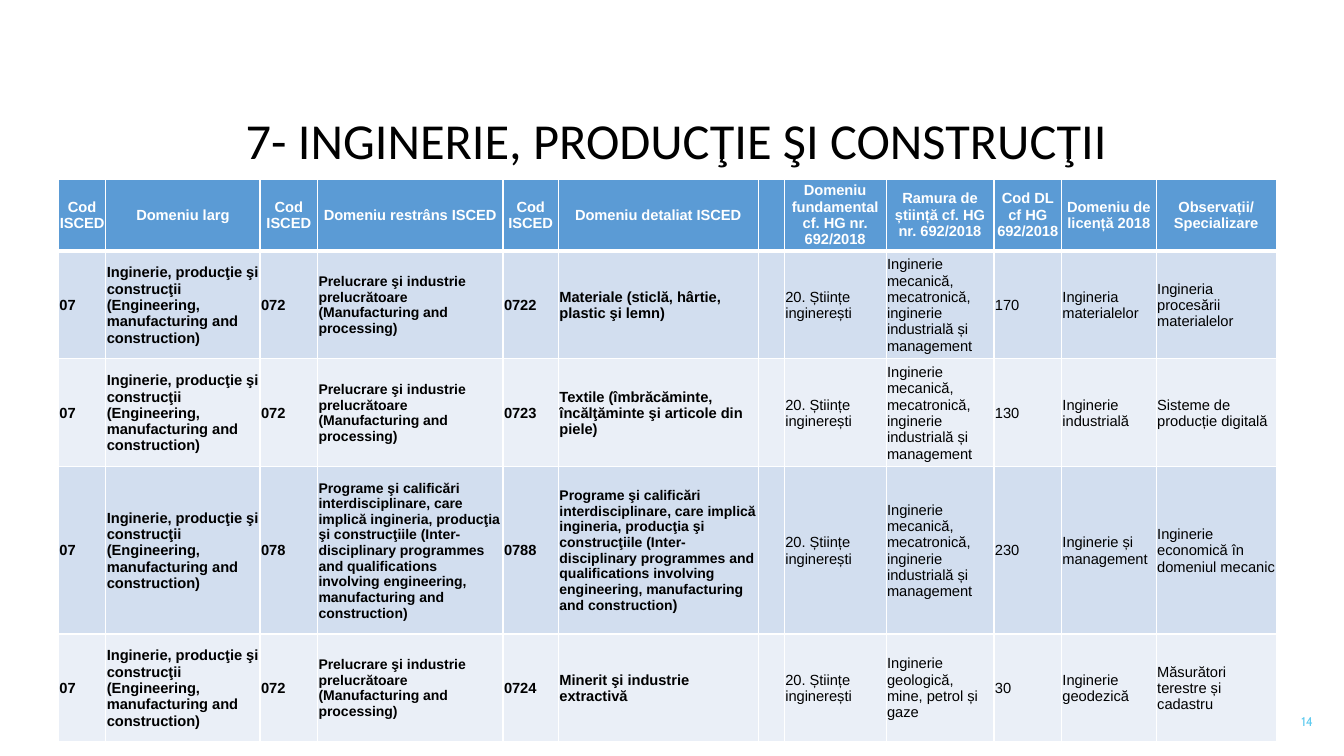
from lxml.etree import SubElement
from pptx import Presentation
from pptx.dml.color import RGBColor
from pptx.enum.text import MSO_ANCHOR, MSO_AUTO_SIZE, PP_ALIGN
from pptx.oxml import parse_xml
from pptx.oxml.ns import nsdecls, qn
from pptx.util import Emu, Pt

PX = 9144  # EMU per px, 100 px to the inch

BLACK = RGBColor(0x00, 0x00, 0x00)
WHITE = RGBColor(0xFF, 0xFF, 0xFF)
HEADER_BLUE = RGBColor(0x5B, 0x9B, 0xD5)
BAND_COLORS = (RGBColor(0xD2, 0xDE, 0xEF), RGBColor(0xEA, 0xEF, 0xF7))
NUMBER_BLUE = RGBColor(0x5F, 0xCB, 0xEF)

# Table contents
COLUMN_WIDTHS = (47, 153, 57, 184, 55, 198, 26, 101, 107, 67, 94, 119)
ROW_HEIGHTS = (71, 107, 107, 166, 107)
NARROW_FIELD_COLUMN = 3
BOLD_COLUMNS = range(6)

HEADERS = (
    "Cod ISCED", "Domeniu larg", "Cod ISCED", "Domeniu restrâns ISCED",
    "Cod ISCED", "Domeniu detaliat ISCED", "",
    "Domeniu fundamental cf. HG nr. 692/2018",
    "Ramura de știință cf. HG nr. 692/2018", "Cod DL cf HG 692/2018",
    "Domeniu de licență 2018", "Observații/ Specializare",
)
BROAD_FIELD = ("Inginerie, producţie şi construcţii "
               "(Engineering, manufacturing and construction)")
PROCESSING = ("Prelucrare şi industrie prelucrătoare "
              "(Manufacturing and processing)")
INTERDISCIPLINARY = (
    "Programe şi calificări interdisciplinare, care implică ingineria, "
    "producţia şi construcţiile (Inter-disciplinary programmes and "
    "qualifications involving engineering, manufacturing and construction)")
MECHANICAL = ("Inginerie mecanică, mecatronică, inginerie industrială "
              "și management")
GEOLOGICAL = "Inginerie geologică, mine, petrol și gaze"

# Narrow code and field, detailed code and field, branch, DL code, degree, notes
PROGRAMMES = (
    ("072", PROCESSING, "0722", "Materiale (sticlă, hârtie, plastic şi lemn)",
     MECHANICAL, "170", "Ingineria materialelor",
     "Ingineria procesării materialelor"),
    ("072", PROCESSING, "0723",
     "Textile (îmbrăcăminte, încălţăminte şi articole din piele)",
     MECHANICAL, "130", "Inginerie industrială",
     "Sisteme de producție digitală"),
    ("078", INTERDISCIPLINARY, "0788", INTERDISCIPLINARY,
     MECHANICAL, "230", "Inginerie și management",
     "Inginerie economică în domeniul mecanic"),
    ("072", PROCESSING, "0724", "Minerit şi industrie extractivă",
     GEOLOGICAL, "30", "Inginerie geodezică",
     "Măsurători terestre și cadastru"),
)


def to_emu(*lengths):
    return [Emu(length * PX) for length in lengths]


def format_font(font, name, size, color, bold=False):
    font.name = name
    font.size = Pt(size)
    font.color.rgb = color
    font.bold = bold


def add_title(slide, box, text):
    title = slide.shapes.title
    title.left, title.top, title.width, title.height = to_emu(*box)
    frame = title.text_frame
    frame.text = text
    frame.auto_size = MSO_AUTO_SIZE.NONE
    frame.vertical_anchor = MSO_ANCHOR.MIDDLE
    paragraph = frame.paragraphs[0]
    paragraph.alignment = PP_ALIGN.CENTER
    paragraph.line_spacing = 0.9
    format_font(paragraph.runs[0].font, "Calibri", 36, BLACK)


def set_borders(cell, top, bottom):
    """Draw white cell borders; top and bottom widths are in points."""
    properties = cell._tc.get_or_add_tcPr()
    widths = (("lnL", 1), ("lnR", 1), ("lnT", top), ("lnB", bottom))
    for position, (tag, width) in enumerate(widths):
        line = parse_xml(f'<a:{tag} {nsdecls("a")} w="{Pt(width)}"/>')
        fill = SubElement(line, qn("a:solidFill"))
        SubElement(fill, qn("a:srgbClr"), val=str(WHITE))
        properties.insert(position, line)


def fill_cell(cell, text, inset, size, color, bold, alignment):
    cell.vertical_anchor = MSO_ANCHOR.MIDDLE
    cell.margin_left, cell.margin_top, cell.margin_right = to_emu(*[inset] * 3)
    cell.margin_bottom = 0
    paragraph = cell.text_frame.paragraphs[0]
    paragraph.text = text
    paragraph.alignment = alignment
    format_font(paragraph.runs[0].font, "Arial", size, color, bold)


def fill_body_cell(cell, text, column):
    small = column == NARROW_FIELD_COLUMN or text == INTERDISCIPLINARY
    bold = column in BOLD_COLUMNS
    # The detailed field closes its long text with a larger bracket
    split = text == INTERDISCIPLINARY and column != NARROW_FIELD_COLUMN
    fill_cell(cell, text[:-1] if split else text, 1, 10 if small else 10.5,
              BLACK, bold, PP_ALIGN.LEFT)
    if split:
        bracket = cell.text_frame.paragraphs[0].add_run()
        bracket.text = text[-1]
        format_font(bracket.font, "Arial", 10.5, BLACK, bold)


def add_programme_table(slide, left, top):
    box = to_emu(left, top, sum(COLUMN_WIDTHS), sum(ROW_HEIGHTS))
    table = slide.shapes.add_table(
        len(ROW_HEIGHTS), len(COLUMN_WIDTHS), *box).table
    for column, width in zip(table.columns, to_emu(*COLUMN_WIDTHS)):
        column.width = width
    for row, height in zip(table.rows, to_emu(*ROW_HEIGHTS)):
        row.height = height

    rows = [HEADERS]
    for programme in PROGRAMMES:
        rows.append(("07", BROAD_FIELD, *programme[:4], "",
                     "20. Științe inginerești", *programme[4:]))
    for row_index, texts in enumerate(rows):
        is_header = row_index == 0
        color = HEADER_BLUE if is_header else BAND_COLORS[(row_index - 1) % 2]
        for column_index, text in enumerate(texts):
            cell = table.cell(row_index, column_index)
            cell.fill.solid()
            cell.fill.fore_color.rgb = color
            set_borders(cell, top=3 if row_index == 1 else 1,
                        bottom=3 if is_header else 1)
            if text and is_header:
                fill_cell(cell, text, 0, 10.5, WHITE, True, PP_ALIGN.CENTER)
            elif text:
                fill_body_cell(cell, text, column_index)


def add_slide_number(slide, box, text):
    frame = slide.shapes.add_textbox(*to_emu(*box)).text_frame
    frame.word_wrap = True
    frame.vertical_anchor = MSO_ANCHOR.MIDDLE
    frame.text = text
    paragraph = frame.paragraphs[0]
    paragraph.alignment = PP_ALIGN.RIGHT
    format_font(paragraph.runs[0].font, "Cabin", 9, NUMBER_BLUE)


def main():
    presentation = Presentation()
    presentation.slide_width, presentation.slide_height = to_emu(1333, 750)
    slide = presentation.slides.add_slide(presentation.slide_layouts[5])
    add_title(slide, (96, 106, 1150, 72),
              "7- INGINERIE, PRODUCŢIE ŞI CONSTRUCŢII")
    add_programme_table(slide, 58, 178)
    add_slide_number(slide, (1012, 696, 300, 40), "14")
    presentation.save("out.pptx")


if __name__ == "__main__":
    main()
